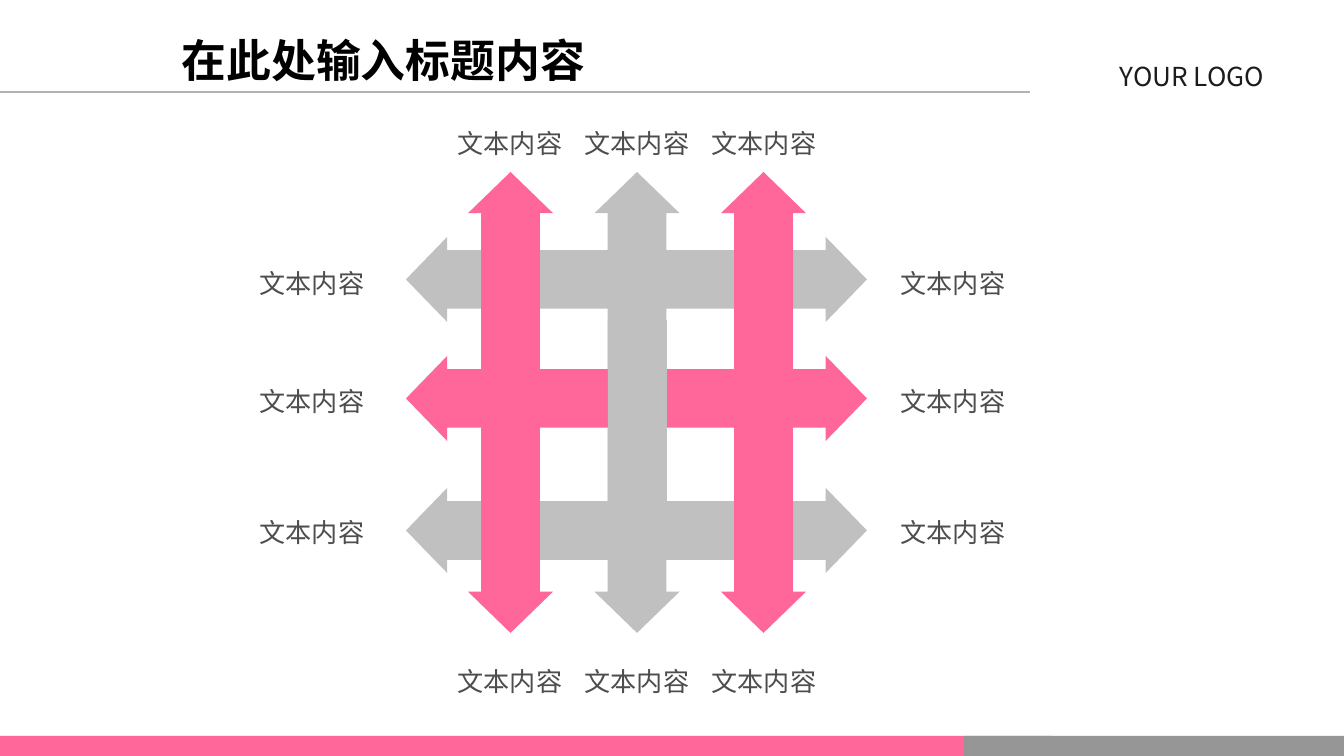
import pptx
import pptx.util
import pptx.dml.color
import pptx.enum.shapes
import pptx.enum.text
import pptx.oxml.ns
import lxml.etree

PX = 914400 / 134.4
SANS = "Noto Sans CJK SC"
PINK, GREY = "FF6699", "C0C0C0"
KIND = pptx.enum.shapes.MSO_SHAPE
qn = pptx.oxml.ns.qn


def paint(item, tint):
    item.solid()
    item.fore_color.rgb = pptx.dml.color.RGBColor.from_string(tint)


def write(words, x, y, w, h, size, face, tint, bold=False, wrap=True):
    box = slide.shapes.add_textbox(*[round(n * PX) for n in (x, y, w, h)])
    frame = box.text_frame
    frame.word_wrap = wrap
    frame.auto_size = pptx.enum.text.MSO_AUTO_SIZE.SHAPE_TO_FIT_TEXT
    para = frame.paragraphs[0]
    para.alignment = pptx.enum.text.PP_ALIGN.CENTER
    run = para.add_run()
    run.text = words
    run.font.size = pptx.util.Pt(size)
    run.font.bold = bold
    run.font.name = face
    paint(run.font.fill, tint)
    east = lxml.etree.SubElement(run.font._element, qn("a:ea"))
    east.set("typeface", SANS)


deck = pptx.Presentation()
deck.slide_width = round(1344 * PX)
deck.slide_height = round(756 * PX)
slide = deck.slides.add_slide(deck.slide_layouts[6])

rule = slide.shapes.add_connector(
    pptx.enum.shapes.MSO_CONNECTOR.STRAIGHT,
    0, round(92 * PX), round(1030 * PX), round(92 * PX))
rule.line.width = pptx.util.Pt(0.75)
paint(rule.line.fill, "B2B2B2")
lxml.etree.SubElement(rule._element.spPr, qn("a:effectLst"))

write("YOUR LOGO", 1052, 54, 280, 44, 14, SANS, "1C1C1C")
write("在此处输入标题内容", 124, 26, 519, 67, 24, "Times New Roman", "000000", bold=True)

rows = [237, 356, 488]
cols = [280 + 126.5 * i for i in range(3)]
forms = [
    (KIND.RECTANGLE, 0, 736, 1052, 20, 0, PINK),
    (KIND.RECTANGLE, 964, 736, 380, 20, 0, "969696"),
    (KIND.LEFT_RIGHT_ARROW, cols[1], 360, 461, 85, 90, GREY),
    (KIND.LEFT_RIGHT_ARROW, 406, rows[0], 461, 85, 0, GREY),
    (KIND.LEFT_RIGHT_ARROW, 406, rows[2], 461, 85, 0, GREY),
    (KIND.LEFT_RIGHT_ARROW, cols[0], 360, 461, 85, 90, PINK),
    (KIND.LEFT_RIGHT_ARROW, cols[2], 360, 461, 85, 90, PINK),
    (KIND.LEFT_RIGHT_ARROW, 406, rows[1], 461, 85, 0, PINK),
    (KIND.RECTANGLE, 608, 320, 59, 181, 0, GREY),
]
for kind, x, y, w, h, turn, tint in forms:
    form = slide.shapes.add_shape(kind, *[round(n * PX) for n in (x, y, w, h)])
    form.shadow.inherit = False
    form.rotation = turn
    form.line.fill.background()
    paint(form.fill, tint)
    if kind == KIND.LEFT_RIGHT_ARROW:
        form.adjustments[0] = 0.69
        form.adjustments[1] = 0.485

spots = [(444 + 127 * i, y) for y in (121, 659) for i in range(3)]
spots += [(x, y) for x in (887, 246) for y in (261, 379, 510)]
for x, y in spots:
    write("文本内容", x, y, 132, 44, 14, SANS, "4D4D4D", wrap=False)

deck.save("out.pptx")
